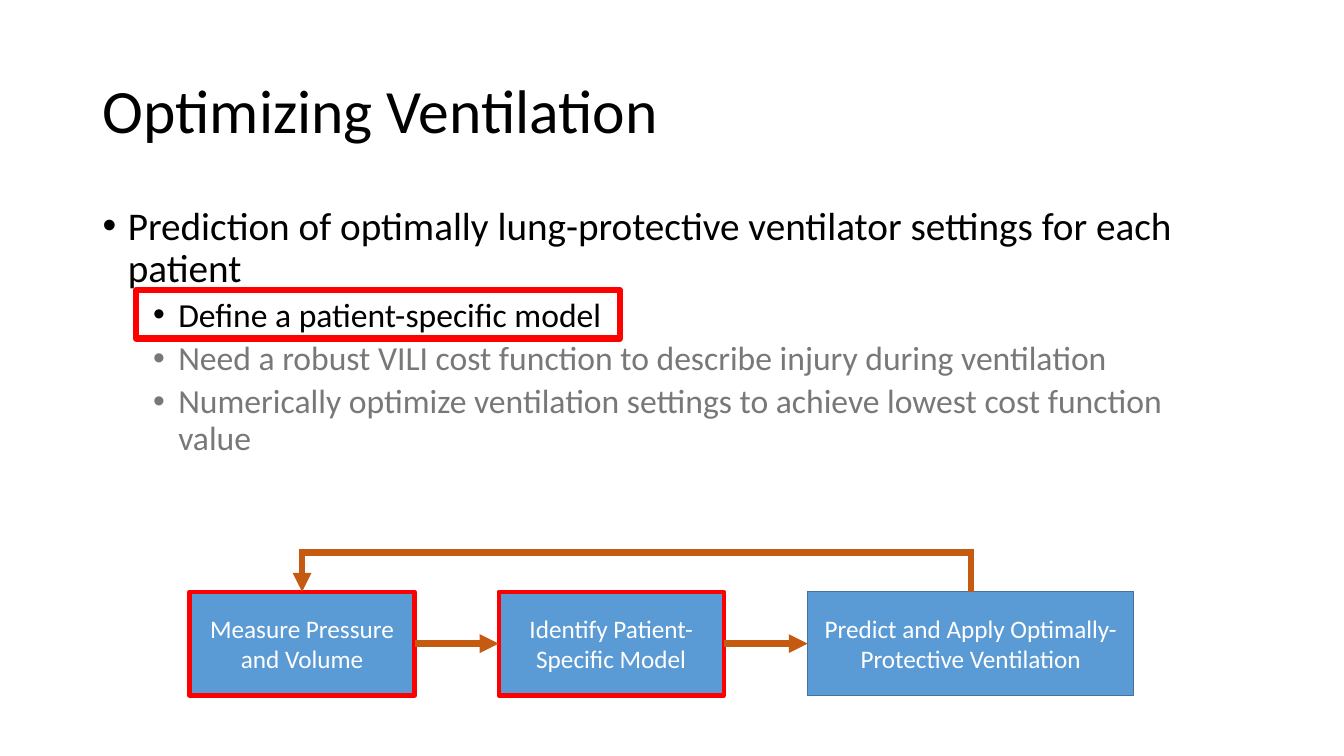
from lxml import etree
from pptx import Presentation
from pptx.dml.color import RGBColor
from pptx.enum.shapes import MSO_CONNECTOR, MSO_SHAPE
from pptx.enum.text import MSO_ANCHOR, PP_ALIGN
from pptx.oxml.ns import qn
from pptx.util import Inches, Pt

RECTANGLE = MSO_SHAPE.RECTANGLE
STRAIGHT = MSO_CONNECTOR.STRAIGHT
MIDDLE = MSO_ANCHOR.MIDDLE
TOP = MSO_ANCHOR.TOP
CENTER = PP_ALIGN.CENTER
LEFT = PP_ALIGN.LEFT

BLACK = RGBColor(0, 0, 0)
WHITE = RGBColor(255, 255, 255)
RED = RGBColor(255, 0, 0)
BLUE = RGBColor(0x5B, 0x9B, 0xD5)
DARK_BLUE = RGBColor(0x43, 0x73, 0x9E)
ORANGE = RGBColor(0xC5, 0x5A, 0x11)

deck = Presentation()
deck.slide_width, deck.slide_height = Inches(13.33), Inches(7.5)
page = deck.slides.add_slide(deck.slide_layouts[6])


def shares(*percents):
    sides = (deck.slide_width, deck.slide_height)
    return [round(sides[i % 2] * percent / 100) for i, percent in enumerate(percents)]


def write(para, text, size, color, **layout):
    for name, value in layout.items():
        setattr(para, name, value)
    span = para.add_run()
    span.text = text
    for name, value in {"name": "Calibri", "size": Pt(size)}.items():
        setattr(span.font, name, value)
    span.font.color.rgb = color


title = page.shapes.add_textbox(*shares(6.9, 5.33, 86.25, 19.33))
body = page.shapes.add_textbox(*shares(6.9, 26.67, 86.25, 63.47))
for box, anchor in ((title, MIDDLE), (body, TOP)):
    box.text_frame.word_wrap = True
    box.text_frame.vertical_anchor = anchor
write(title.text_frame.paragraphs[0], "Optimizing Ventilation", 44, BLACK,
      line_spacing=0.9, alignment=LEFT)

points = [
    (0, "Prediction of optimally lung-protective ventilator settings for each patient"),
    (1, "Define a patient-specific model"),
    (1, "Need a robust VILI cost function to describe injury during ventilation"),
    (1, "Numerically optimize ventilation settings to achieve lowest cost function value"),
]
for i, (level, text) in enumerate(points):
    para = body.text_frame.add_paragraph() if i else body.text_frame.paragraphs[0]
    write(para, text, 28 - 4 * level, BLACK, level=level, line_spacing=0.9,
          space_before=Pt(10 - 5 * level), alignment=LEFT)
    props = para._p.get_or_add_pPr()
    props.set("marL", str(Inches(0.25 + 0.5 * level)))
    props.set("indent", str(Inches(-0.25)))
    etree.SubElement(props, qn("a:buFont")).set("typeface", "Arial")
    etree.SubElement(props, qn("a:buChar")).set("char", "•")

STEP_LEFT, STEP_PITCH, STEP_WIDTH, LAST_WIDTH = 14.1, 23, 16.75, 24.25
STEP_TOP, STEP_HEIGHT, LOOP_TOP = 78.27, 13.73, 73.07
STEP_MIDDLE = STEP_TOP + STEP_HEIGHT / 2

steps = [
    ("Measure Pressure and Volume", STEP_WIDTH, RED, 3),
    ("Identify Patient-Specific Model", STEP_WIDTH, RED, 3),
    ("Predict and Apply Optimally-Protective Ventilation", LAST_WIDTH, DARK_BLUE, 1),
]
for i, (text, width, outline, weight) in enumerate(steps):
    left = STEP_LEFT + i * STEP_PITCH
    step = page.shapes.add_shape(RECTANGLE, *shares(left, STEP_TOP, width, STEP_HEIGHT))
    step.shadow.inherit = False
    step.fill.solid()
    step.fill.fore_color.rgb = BLUE
    step.line.color.rgb = outline
    step.line.width = Pt(weight)
    step.text_frame.word_wrap = True
    step.text_frame.vertical_anchor = MIDDLE
    write(step.text_frame.paragraphs[0], text, 18, WHITE, alignment=CENTER)

arrows = []
for i in range(len(steps) - 1):
    left = STEP_LEFT + i * STEP_PITCH
    ends = shares(left + STEP_WIDTH, STEP_MIDDLE, left + STEP_PITCH, STEP_MIDDLE)
    arrows.append(page.shapes.add_connector(STRAIGHT, *ends))

loop_start = STEP_LEFT + 2 * STEP_PITCH + LAST_WIDTH / 2
loop_end = STEP_LEFT + STEP_WIDTH / 2
outline = page.shapes.build_freeform(*shares(loop_start, STEP_TOP))
corners = [(loop_start, LOOP_TOP), (loop_end, LOOP_TOP), (loop_end, STEP_TOP)]
outline.add_line_segments([shares(*corner) for corner in corners], close=False)
feedback = outline.convert_to_shape()
feedback.fill.background()
arrows.append(feedback)

for arrow in arrows:
    arrow.line.color.rgb = ORANGE
    arrow.line.width = Pt(4.5)
    stroke = arrow.line._get_or_add_ln()
    etree.SubElement(stroke, qn("a:miter")).set("lim", "800000")
    etree.SubElement(stroke, qn("a:tailEnd")).set("type", "triangle")
    etree.SubElement(arrow._element.spPr, qn("a:effectLst"))

highlight = page.shapes.add_shape(RECTANGLE, *shares(10.13, 38.4, 36, 6.4))
highlight.shadow.inherit = False
highlight.fill.background()
highlight.line.color.rgb = RED
highlight.line.width = Pt(4.5)

veil = page.shapes.add_shape(RECTANGLE, *shares(10.13, 45.73, 79.27, 15.73))
veil.shadow.inherit = False
veil.line.fill.background()
veil.fill.solid()
veil.fill.fore_color.rgb = WHITE
tint = veil._element.spPr.find(qn("a:solidFill"))[0]
etree.SubElement(tint, qn("a:alpha")).set("val", "47000")

deck.save("out.pptx")
